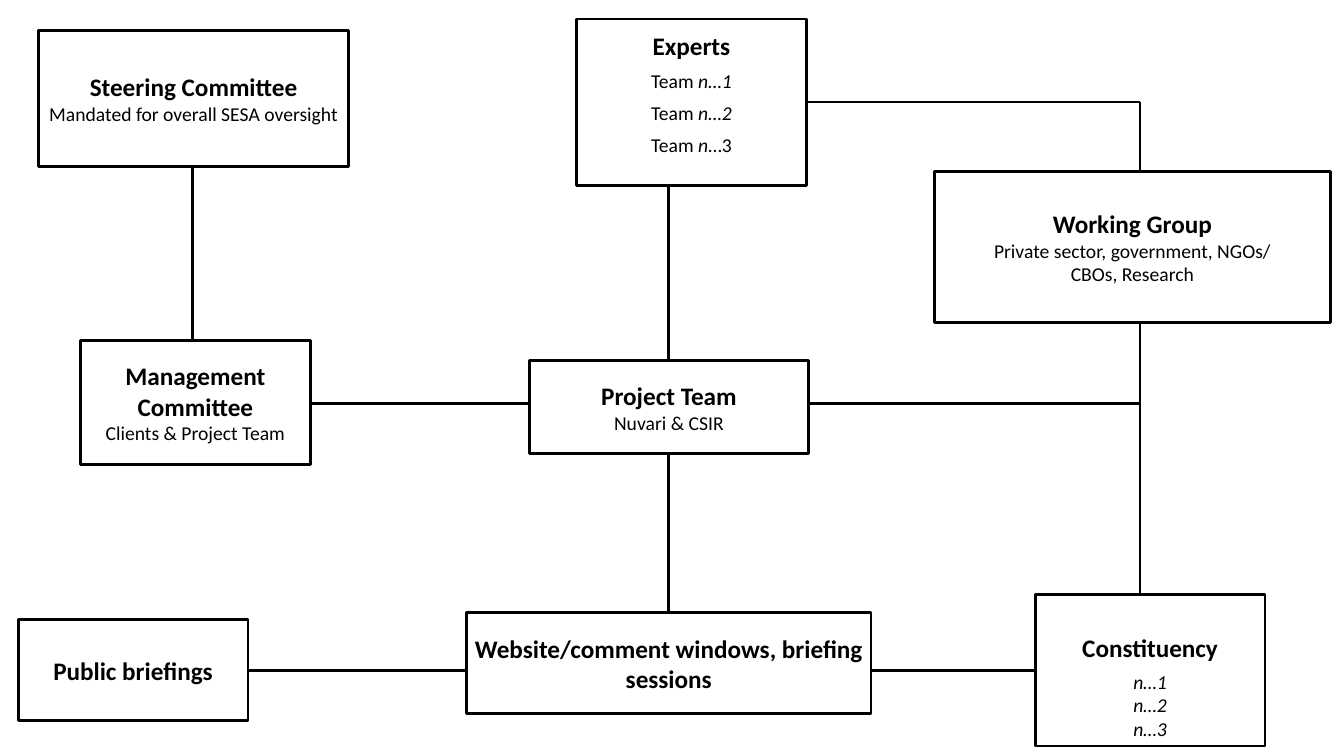
from lxml.etree import SubElement
from pptx import Presentation
from pptx.dml.color import RGBColor
from pptx.enum.shapes import MSO_CONNECTOR as Connector, MSO_SHAPE as Shape
from pptx.enum.text import MSO_ANCHOR as Anchor, PP_ALIGN as Align
from pptx.oxml.ns import qn
from pptx.util import Cm, Pt

BLACK = RGBColor(0x00, 0x00, 0x00)
WHITE = RGBColor(0xFF, 0xFF, 0xFF)
LINE_WIDTH = Pt(2)


def add_text(para, text, size=14, bold=False, italic=False):
    span = para.add_run()
    span.text = text
    font = span.font
    font.name = "Calibri"
    font.size = Pt(size)
    font.bold = bold
    font.italic = italic
    font.color.rgb = BLACK


deck = Presentation()
deck.slide_width = Cm(33.87)
deck.slide_height = Cm(19.05)
page = deck.slides.add_slide(deck.slide_layouts[6])

links = [
    (4.85, 3.89, 4.85, 8.59),
    (6.27, 16.89, 26.09, 16.89),
    (7.82, 10.16, 28.73, 10.16),
    (28.73, 14.99, 28.73, 2.57),
    (16.84, 15.44, 16.84, 4.19),
    (20.35, 2.57, 28.73, 2.57),
]
for ends in links:
    link = page.shapes.add_connector(Connector.STRAIGHT, *map(Cm, ends))
    link.line.color.rgb = BLACK
    link.line.width = LINE_WIDTH
    SubElement(link._element.spPr, qn("a:effectLst"))

# Each detail line is a list of (text, italic) spans.
groups = [
    ("Constituency", (26.09, 14.99, 5.79, 3.81), Anchor.BOTTOM, (5, 0, 0),
     [[("n…1", True)], [("n…2", True)], [("n…3", True)]]),
    ("Working Group", (23.55, 4.32, 9.98, 3.81), Anchor.MIDDLE, (0, 0),
     [[("Private sector, government, NGOs/", False)], [("CBOs, Research", False)]]),
    ("Website/comment windows, briefing sessions", (11.76, 15.44, 10.19, 2.54),
     Anchor.MIDDLE, (), []),
    ("Public briefings", (0.46, 15.62, 5.79, 2.54), Anchor.MIDDLE, (), []),
    ("Experts", (14.53, 0.48, 5.79, 4.19), Anchor.TOP, (6, 6, 6),
     [[("Team ", False), ("n…1", True)],
      [("Team ", False), ("n…2", True)],
      [("Team ", False), ("n", True), ("…3", False)]]),
    ("Project Team", (13.34, 9.09, 7.04, 2.34), Anchor.MIDDLE, (0,),
     [[("Nuvari & CSIR", False)]]),
    ("Management Committee", (2.03, 8.59, 5.79, 3.12), Anchor.MIDDLE, (0,),
     [[("Clients & Project Team", False)]]),
    ("Steering Committee", (0.97, 0.76, 7.82, 3.43), Anchor.MIDDLE, (0,),
     [[("Mandated for overall SESA oversight", False)]]),
]
for title, place, anchor, gaps, details in groups:
    box = page.shapes.add_shape(Shape.RECTANGLE, *map(Cm, place))
    box.shadow.inherit = False
    box.fill.solid()
    box.fill.fore_color.rgb = WHITE
    box.line.color.rgb = BLACK
    box.line.width = LINE_WIDTH
    frame = box.text_frame
    frame.word_wrap = True
    frame.vertical_anchor = anchor
    frame.margin_left = frame.margin_right = 0
    frame.margin_top = Cm(0.28 if anchor == Anchor.TOP else 0)
    frame.margin_bottom = Cm(0.15 if anchor == Anchor.BOTTOM else 0)
    heading = frame.paragraphs[0]
    heading.alignment = Align.CENTER
    add_text(heading, title, size=18, bold=True)
    for gap, spans in zip(gaps, details):
        para = frame.add_paragraph()
        para.alignment = Align.CENTER
        para.space_before = Pt(gap)
        for text, italic in spans:
            add_text(para, text, italic=italic)

deck.save("out.pptx")
